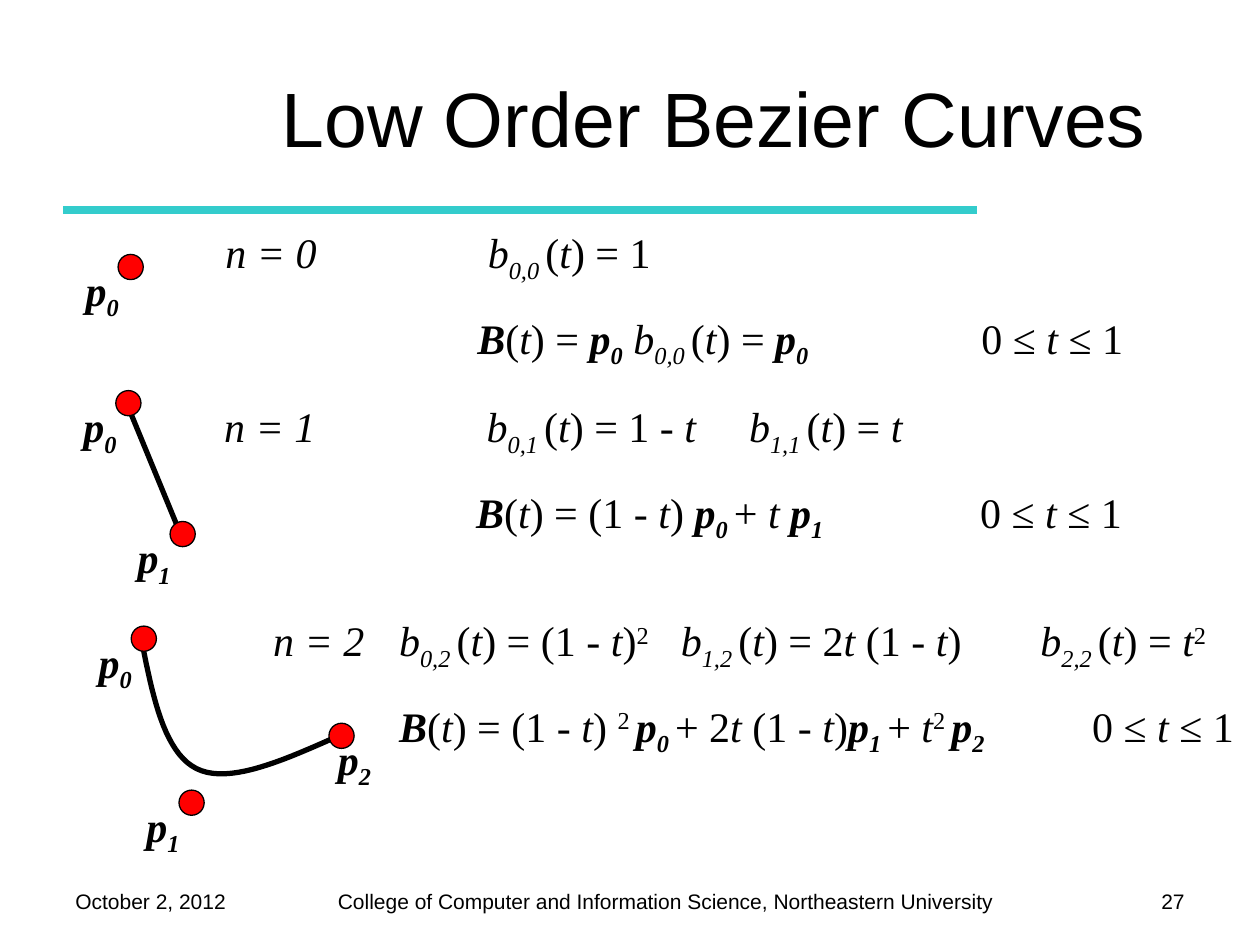
import pptx
import pptx.util
import pptx.dml.color
import pptx.enum.shapes
import pptx.enum.text
import pptx.oxml.ns
import lxml.etree

Pt = pptx.util.Pt
ALIGN = pptx.enum.text.PP_ALIGN
ANCHOR = pptx.enum.text.MSO_ANCHOR
qn = pptx.oxml.ns.qn


def rgb(value):
    return pptx.dml.color.RGBColor.from_string(value)


def add_text(box, lines, fmt, align=ALIGN.LEFT, anchor=ANCHOR.TOP):
    """Each line is (markup, tab stops); markup is style:text joined by |.
    Styles: b bold, i italic, d subscript, u superscript."""
    tf = s.shapes.add_textbox(*[Pt(v) for v in box]).text_frame
    tf.word_wrap, tf.vertical_anchor = True, anchor
    for n, (markup, stops) in enumerate(lines):
        p = tf.add_paragraph() if n else tf.paragraphs[0]
        if stops:
            tabs = lxml.etree.SubElement(p._p.get_or_add_pPr(), qn("a:tabLst"))
            for stop in stops:
                lxml.etree.SubElement(tabs, qn("a:tab"), pos=str(Pt(stop)), algn="l")
        p.alignment = align
        p.space_before, p.space_after = Pt(14 if n else 0), Pt(2 if len(lines) > 1 else 0)
        for part in markup.split("|"):
            style, text = part.split(":", 1)
            r = p.add_run()
            r.text = text
            for name, value in {**fmt, "bold": "b" in style, "italic": "i" in style}.items():
                setattr(r.font, name, value)
            r.font.color.rgb = rgb("000000")
            for mark, shift in {"d": "-25000", "u": "30000"}.items():
                if mark in style:
                    r._r.get_or_add_rPr().set("baseline", shift)


prs = pptx.Presentation()
prs.slide_width, prs.slide_height = Pt(720), Pt(540)
s = prs.slides.add_slide(prs.slide_layouts[6])

title = {"name": "Arial", "size": Pt(44)}
small = {"name": "Arial", "size": Pt(12)}
math_font = {"name": "Times New Roman", "size": Pt(24)}

# Title and footer
add_text((132, 21.6, 552, 90), [(":Low Order Bezier Curves", ())], title,
         ALIGN.CENTER, ANCHOR.MIDDLE)
add_text((36, 504, 126, 24), [(":October 2, 2012", ())], small)
add_text((186, 504, 396, 22),
         [(":College of Computer and Information Science, Northeastern University", ())], small)
add_text((624, 504, 60, 25), [(":27", ())], small, ALIGN.RIGHT)

# Title rule and the straight n = 1 curve
for x1, y1, x2, y2, color, width in [(36, 120, 558, 120, "33CCCC", 4.5),
                                     (72, 229.5, 103.5, 306, "000000", 3)]:
    sp = s.shapes.add_connector(pptx.enum.shapes.MSO_CONNECTOR.STRAIGHT,
                                Pt(x1), Pt(y1), Pt(x2), Pt(y2))
    sp.line.color.rgb, sp.line.width = rgb(color), Pt(width)
    lxml.etree.SubElement(sp._element.spPr, qn("a:effectLst"))

# The n = 2 curve, sampled from two cubic segments
segments = [[(80.6, 364.3), (87.1, 397.4), (93.6, 429.8), (112.3, 439.2)],
            [(112.3, 439.2), (131, 448.6), (162.7, 434.2), (195.1, 419.8)]]
steps = 20
curve = []
for seg in segments:
    for k in range(1, steps + 1):
        t = k / steps
        weights = [(1 - t) ** 3, 3 * t * (1 - t) ** 2, 3 * t ** 2 * (1 - t), t ** 3]
        curve.append([Pt(sum(w * pt[axis] for w, pt in zip(weights, seg))) for axis in (0, 1)])
start = [Pt(v) for v in segments[0][0]]
builder = s.shapes.build_freeform(*start)
builder.add_line_segments(curve, close=False)
sp = builder.convert_to_shape()
sp.shadow.inherit = False
sp.fill.background()
sp.line.color.rgb, sp.line.width = rgb("000000"), Pt(3)

# Control points: left, top, index, label offset
for x, y, index, dx in [(67.5, 145.4, 0, -25.7),
                        (66.2, 223.2, 0, -25.7), (97.2, 298, 1, -25.7),
                        (75, 357.8, 0, -25.7), (102.3, 451.5, 1, -25.7),
                        (188, 413.3, 2, -2)]:
    sp = s.shapes.add_shape(pptx.enum.shapes.MSO_SHAPE.OVAL, Pt(x), Pt(y), Pt(14.4), Pt(14.4))
    sp.shadow.inherit = False
    sp.fill.solid()
    sp.fill.fore_color.rgb = rgb("FF0000")
    sp.line.color.rgb, sp.line.width = rgb("000000"), Pt(0.75)
    add_text((x + dx, y + 2.2, 42.5, 38.9), [(f"bi:p|bid:{index}", ())], math_font)

# Formulas: basis functions, then the curve and its range
end = "i:t |:≤ 1"
formulas = [
    ((121.7, 126, 551.5, 85), [
        ("i:n = 0\tb|id:0,0 |:(|i:t|:) = 1", (150,)),
        ("bi:\tB|:(|i:t|:) = |bi:p|bid:0|i: b|id:0,0 |:(|i:t|:) = |bi:p|bid:0|:\t0 ≤ |" + end,
         (144, 432))]),
    ((121, 225.4, 551.5, 85), [
        ("i:n = 1\tb|id:0,1 |:(|i:t|:) = 1 - |i:t\tb|id:1,1 |:(|i:t|:) = |i:t", (150, 300)),
        ("bi:\tB|:(|i:t|:) = (1 - |i:t|:) |bi:p|bid:0 |:+ |i:t |bi:p|bid:1|:\t0 ≤ |" + end,
         (144, 432))]),
    ((149, 347.8, 571, 85), [
        ("i:n = 2\tb|id:0,2 |:(|i:t|:) = (1 - |i:t|:)|u:2|i:\tb|id:1,2 |:(|i:t|:) = 2|i:t |"
         ":(1 - |i:t|:)|i:\tb|id:2,2 |:(|i:t|:) = |i:t|u:2", (72, 233, 438.5)),
        ("bi:\tB|:(|i:t|:) = (1 - |i:t|:) |u:2 |bi:p|bid:0 |:+ 2|i:t |:(1 - |i:t|:)|"
         "bi:p|bid:1 |:+ |i:t|u:2 |bi:p|bid:2|:\t0 ≤ |" + end, (72, 468))]),
]
for box, lines in formulas:
    add_text(box, lines, math_font)

prs.save("out.pptx")
